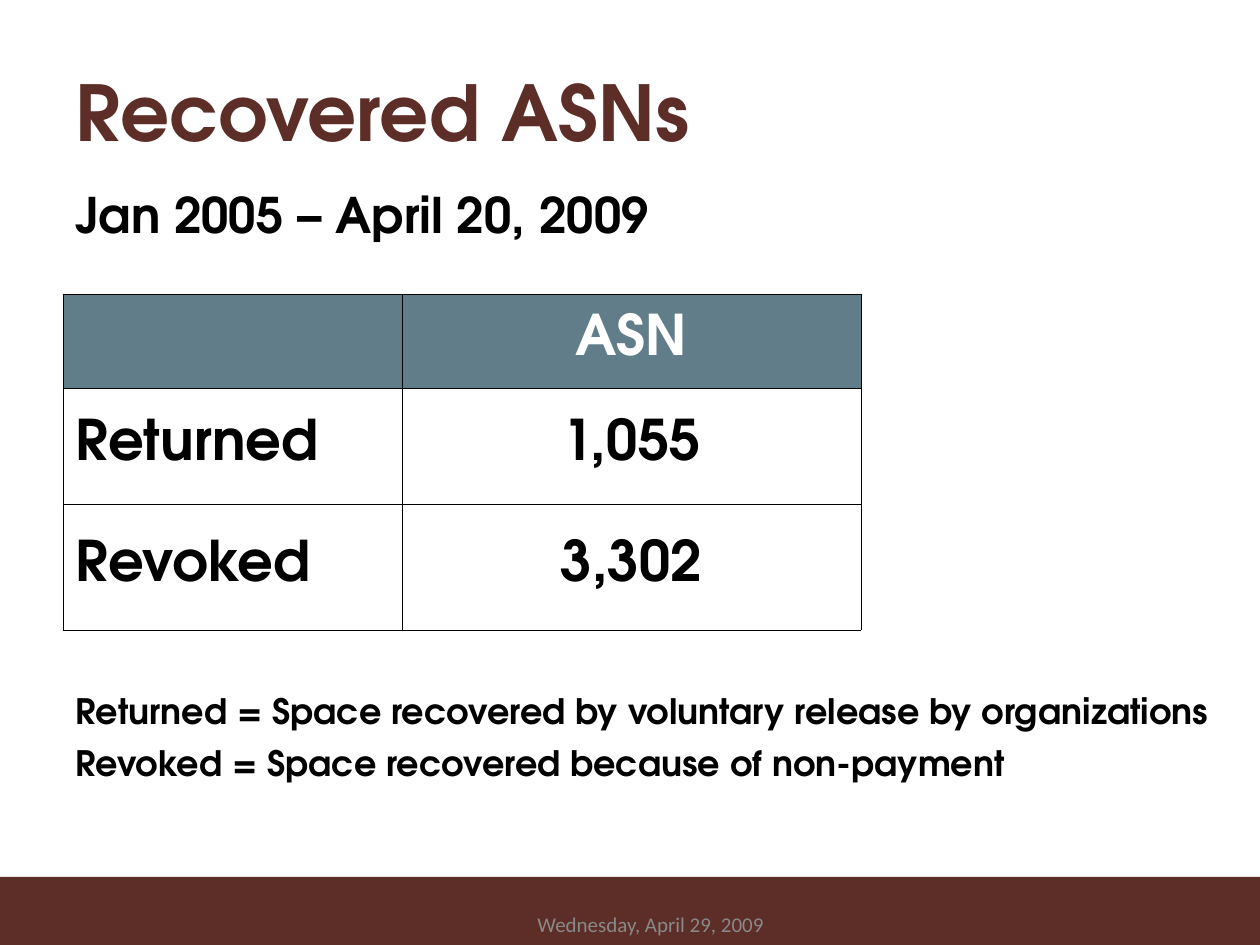
import pptx
import pptx.dml.color
import pptx.enum.shapes
import pptx.enum.text
import pptx.oxml
import pptx.oxml.ns
import pptx.util

PX = 914400 / 126
HEADING_FONT = "TeX Gyre Adventor"
MAROON, SLATE, GREY = "5D2D27", "617D89", "898989"
BLACK, WHITE = "000000", "FFFFFF"
MIDDLE = pptx.enum.text.MSO_ANCHOR.MIDDLE
LEFT, CENTER = pptx.enum.text.PP_ALIGN.LEFT, pptx.enum.text.PP_ALIGN.CENTER


def emu(px):
    return pptx.util.Emu(round(px * PX))


def color(value):
    return pptx.dml.color.RGBColor.from_string(value)


def format_text(frame, size, text_color, align=LEFT, font=HEADING_FONT, bold=True):
    for paragraph in frame.paragraphs:
        paragraph.alignment = align
        for run in paragraph.runs:
            run.font.size = pptx.util.Pt(size)
            run.font.name = font
            run.font.bold = bold
            run.font.color.rgb = color(text_color)


def add_text(slide, box, text, wrap=True):
    frame = slide.shapes.add_textbox(*map(emu, box)).text_frame
    frame.word_wrap = wrap
    frame.text = text
    return frame


def add_title(slide, box, text):
    title = slide.shapes.title
    title.left, title.top, title.width, title.height = map(emu, box)
    title.text_frame.text = text
    title.text_frame.vertical_anchor = MIDDLE
    format_text(title.text_frame, 44, MAROON)


def add_period(slide, box, text):
    format_text(add_text(slide, box, text), 28, BLACK)


def add_definitions(slide, box, lines):
    frame = add_text(slide, box, "\n".join(lines), wrap=False)
    frame.auto_size = pptx.enum.text.MSO_AUTO_SIZE.SHAPE_TO_FIT_TEXT
    format_text(frame, 20, BLACK)
    for paragraph in frame.paragraphs:
        paragraph.space_after = pptx.util.Pt(6)


def add_footer(slide, box, date):
    left, top, width, height = box
    band = slide.shapes.add_shape(
        pptx.enum.shapes.MSO_SHAPE.RECTANGLE, *map(emu, box))
    band.shadow.inherit = False
    band.fill.solid()
    band.fill.fore_color.rgb = color(MAROON)
    band.line.fill.background()
    date_box = (left + 525, top + 26, width - 525, height - 25)
    frame = add_text(slide, date_box, date)
    frame.vertical_anchor = MIDDLE
    format_text(frame, 12, GREY, font="Calibri", bold=False)


def set_borders(cell):
    properties = cell._tc.get_or_add_tcPr()
    for position, side in enumerate(("lnL", "lnR", "lnT", "lnB")):
        border = pptx.oxml.parse_xml(
            f'<a:{side} {pptx.oxml.ns.nsdecls("a")} w="6350"><a:solidFill>'
            f'<a:srgbClr val="{BLACK}"/></a:solidFill></a:{side}>')
        properties.insert(position, border)


def add_counts(slide, box, column_widths, row_heights, rows):
    table = slide.shapes.add_table(
        len(rows), len(column_widths), *map(emu, box)).table
    for column, width in zip(table.columns, column_widths):
        column.width = emu(width)
    for row, height in zip(table.rows, row_heights):
        row.height = emu(height)
    for r, values in enumerate(rows):
        for c, value in enumerate(values):
            cell = table.cell(r, c)
            cell.fill.solid()
            cell.fill.fore_color.rgb = color(WHITE if r else SLATE)
            set_borders(cell)
            cell.vertical_anchor = MIDDLE
            cell.text_frame.text = value
            paragraph = cell.text_frame.paragraphs[0]
            paragraph.line_spacing = 0.95
            format_text(cell.text_frame, 32, BLACK if r else WHITE,
                        CENTER if c else LEFT)


def main():
    deck = pptx.Presentation()
    deck.slide_width, deck.slide_height = emu(1260), emu(945)
    slide = deck.slides.add_slide(deck.slide_layouts.get_by_name("Title Only"))
    add_footer(slide, (0, 877, 1260, 68), "Wednesday, April 29, 2009")
    add_counts(slide, (63, 294, 798, 336), (339, 459), (94, 116, 126), (
        ("", "ASN"),
        ("Returned", "1,055"),
        ("Revoked", "3,302"),
    ))
    add_definitions(slide, (63, 683, 1169, 108), (
        "Returned = Space recovered by voluntary release by organizations",
        "Revoked = Space recovered because of non-payment",
    ))
    add_title(slide, (63, 32, 1134, 157), "Recovered ASNs")
    add_period(slide, (63, 178, 1197, 74), "Jan 2005 – April 20, 2009")
    deck.save("out.pptx")


if __name__ == "__main__":
    main()
